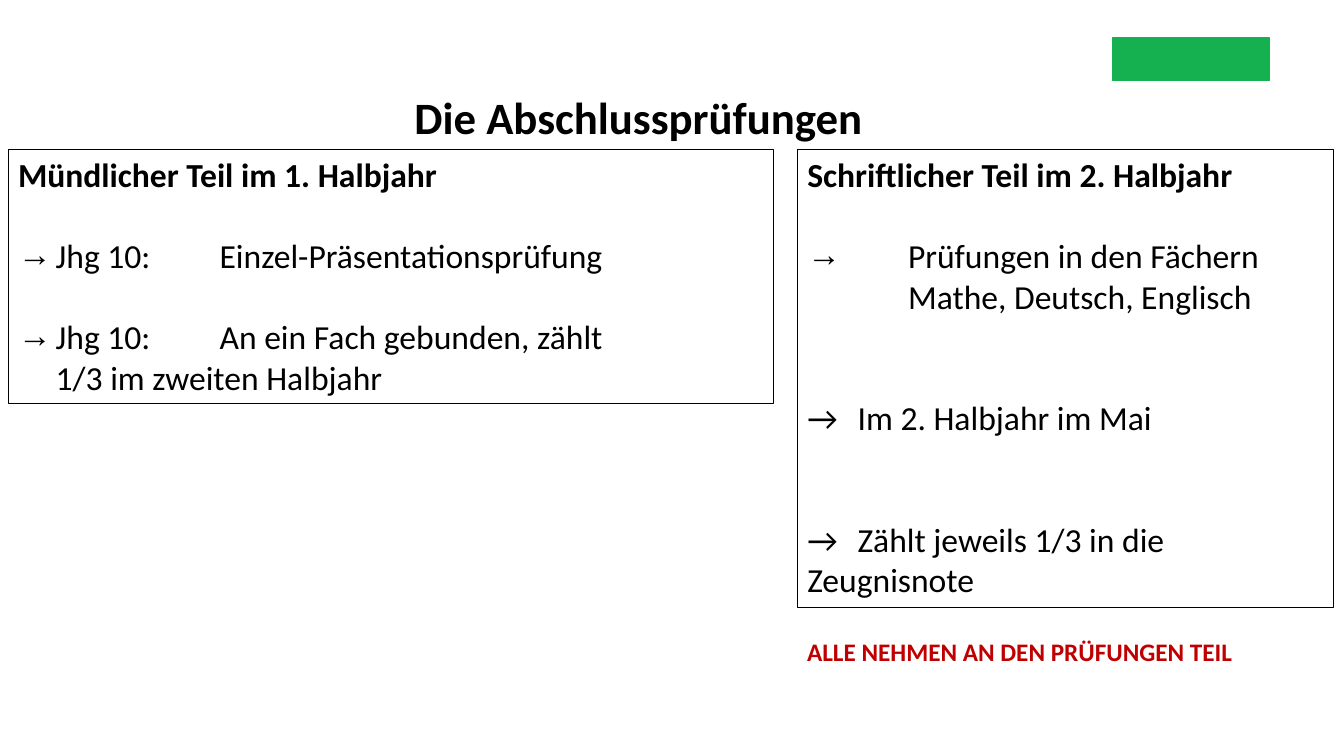
import pptx
import pptx.dml.color
import pptx.enum.shapes
import pptx.enum.text
import pptx.oxml.ns
import pptx.util
from lxml import etree
from pptx.util import Cm

BLACK = pptx.dml.color.RGBColor(0x00, 0x00, 0x00)
GREEN = pptx.dml.color.RGBColor(0x15, 0xB1, 0x50)
RED = pptx.dml.color.RGBColor(0xC0, 0x00, 0x00)
FONT = "Calibri"
BODY_SIZE = 24
LINE = 29  # height of one body line in points

# Each entry: text, lines of space before, arrow bullet, hanging indent, tab stop
ORAL_PART = [
    ("Mündlicher Teil im 1. Halbjahr", 0, False, Cm(0), None),
    ("Jhg 10:\tEinzel-Präsentationsprüfung", 1, True, Cm(0.95), Cm(5.08)),
    ("Jhg 10:\tAn ein Fach gebunden, zählt\v1/3 im zweiten Halbjahr",
     1, True, Cm(0.95), Cm(5.08)),
]
WRITTEN_PART = [
    ("Schriftlicher Teil im 2. Halbjahr", 0, False, Cm(0), None),
    ("Prüfungen in den Fächern Mathe, Deutsch, Englisch", 1, True, Cm(2.54), None),
    ("→\tIm 2. Halbjahr im Mai", 2, False, Cm(0), Cm(2.54)),
    ("→\tZählt jeweils 1/3 in die Zeugnisnote", 2, False, Cm(0), Cm(2.54)),
]


def place(shape, left, top, width, height):
    shape.left, shape.top = left, top
    shape.width, shape.height = width, height


def add_element(parent, tag, **attributes):
    values = {name: str(value) for name, value in attributes.items()}
    return etree.SubElement(parent, pptx.oxml.ns.qn(tag), values)


def format_runs(paragraph, size, bold, color):
    for run in paragraph.runs:
        run.font.name = FONT
        run.font.size = pptx.util.Pt(size)
        run.font.bold = bold
        run.font.color.rgb = color
    for line_break in paragraph._p.findall(pptx.oxml.ns.qn("a:br")):
        add_element(line_break, "a:rPr", sz=size * 100)


def prepare_frame(shape):
    frame = shape.text_frame
    frame.word_wrap = True
    frame.auto_size = pptx.enum.text.MSO_AUTO_SIZE.NONE
    frame.vertical_anchor = pptx.enum.text.MSO_ANCHOR.TOP
    return frame


def write_line(shape, text, size, color):
    """Fill a shape with one bold, left-aligned line."""
    frame = prepare_frame(shape)
    frame.text = text
    paragraph = frame.paragraphs[0]
    paragraph.alignment = pptx.enum.text.PP_ALIGN.LEFT
    format_runs(paragraph, size, True, color)


def set_indent(paragraph, arrow, indent, tab):
    properties = paragraph._p.get_or_add_pPr()
    properties.set("marL", str(indent))
    properties.set("indent", str(-indent))
    if arrow:
        add_element(properties, "a:buChar", char="→")
    else:
        add_element(properties, "a:buNone")
    if tab:
        tabs = add_element(properties, "a:tabLst")
        add_element(tabs, "a:tab", pos=tab, algn="l")


def write_exam_box(shape, entries):
    """Fill a framed list whose first entry is its bold heading."""
    shape.line.color.rgb = BLACK
    shape.line.width = pptx.util.Pt(0.25)
    frame = prepare_frame(shape)
    for index, (text, gap, arrow, indent, tab) in enumerate(entries):
        paragraph = frame.add_paragraph() if index else frame.paragraphs[0]
        paragraph.text = text
        paragraph.space_before = pptx.util.Pt(gap * LINE)
        set_indent(paragraph, arrow, indent, tab)
        format_runs(paragraph, BODY_SIZE, index == 0, BLACK)


def add_green_bar(slide):
    bar = slide.shapes.add_shape(
        pptx.enum.shapes.MSO_SHAPE.RECTANGLE,
        Cm(28.04), Cm(0.96), Cm(3.96), Cm(1.07))
    bar.shadow.inherit = False
    bar.fill.solid()
    bar.fill.fore_color.rgb = GREEN
    bar.line.color.rgb = GREEN
    bar.line.width = pptx.util.Pt(1)


def main():
    presentation = pptx.Presentation()
    presentation.slide_width = Cm(33.87)
    presentation.slide_height = Cm(19.05)
    slide = presentation.slides.add_slide(presentation.slide_layouts[3])
    title, oral_box, written_box = slide.placeholders

    add_green_bar(slide)
    place(title, Cm(10.19), Cm(2.13), Cm(13.74), Cm(1.63))
    write_line(title, "Die Abschlussprüfungen", 32, BLACK)

    place(oral_box, Cm(0.2), Cm(3.76), Cm(19.28), Cm(6.4))
    write_exam_box(oral_box, ORAL_PART)
    place(written_box, Cm(20.09), Cm(3.76), Cm(13.51), Cm(11.53))
    write_exam_box(written_box, WRITTEN_PART)

    note = slide.shapes.add_textbox(Cm(20.09), Cm(15.9), Cm(13.7), Cm(1.02))
    write_line(note, "ALLE NEHMEN AN DEN PRÜFUNGEN TEIL", 18, RED)

    presentation.save("out.pptx")


if __name__ == "__main__":
    main()
